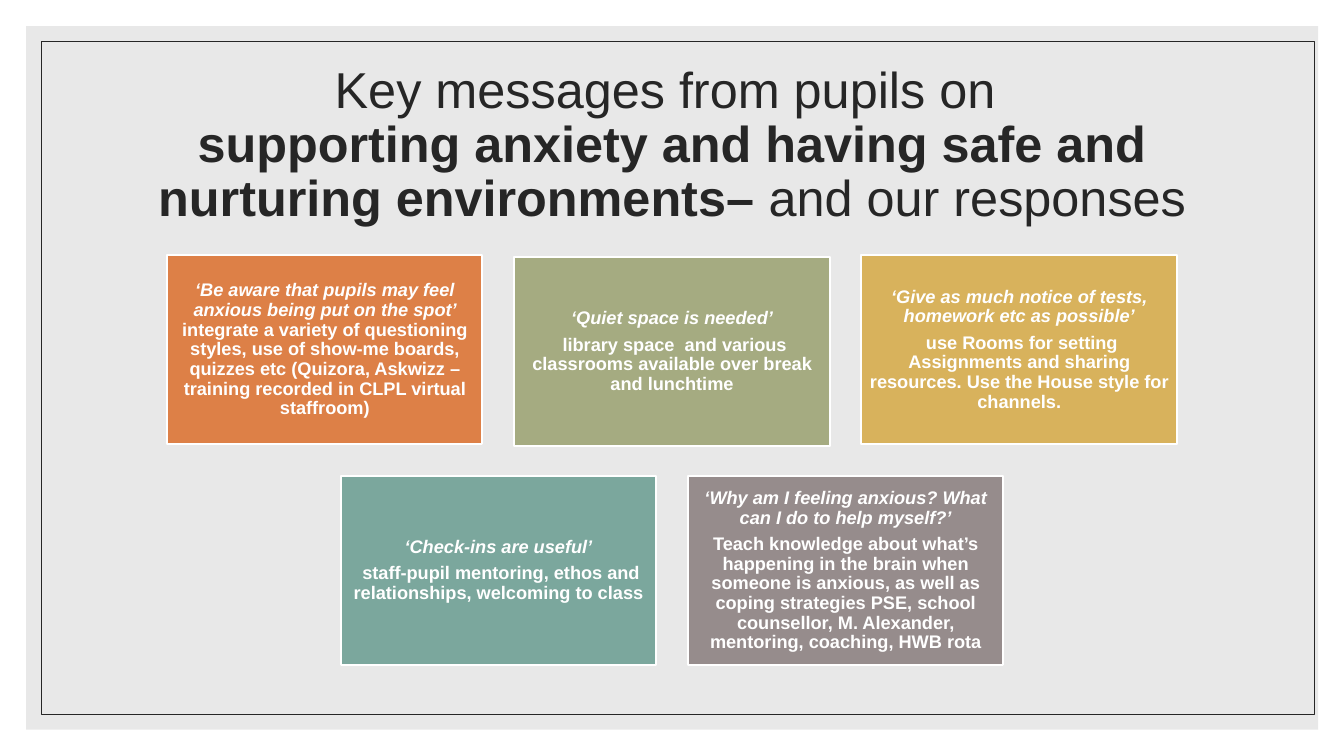
"""Build a slide of pupils' key messages on anxiety and the school's responses."""
from dataclasses import dataclass

from lxml import etree
from pptx import Presentation, util as u
from pptx.dml.color import RGBColor
from pptx.enum import shapes, text
from pptx.oxml.ns import qn


@dataclass(frozen=True)
class Theme:
    font: str = "Arial"
    ink: str = "262626"
    white: str = "FFFFFF"
    panel: str = "D9D9D9"
    orange: str = "DD8047"
    olive: str = "A5AB81"
    gold: str = "D8B25C"
    teal: str = "7BA79D"
    mauve: str = "968C8C"
    head: float = 36
    body: float = 13


theme = Theme()


def write(para, words, size, color, bold=False, italic=False):
    para.alignment = text.PP_ALIGN.CENTER
    para.line_spacing = 0.9
    run = para.add_run()
    run.text = words
    font = run.font
    font.name, font.size = theme.font, u.Pt(size)
    font.bold, font.italic = bold, italic
    font.color.rgb = RGBColor.from_string(color)


def box(left, top, width, height, fill=None, line=None, weight=0.5):
    shape = slide.shapes.add_shape(
        shapes.MSO_SHAPE.RECTANGLE, u.Cm(left), u.Cm(top), u.Cm(width), u.Cm(height))
    shape.shadow.inherit = False
    if fill:
        shape.fill.solid()
        shape.fill.fore_color.rgb = RGBColor.from_string(fill)
    else:
        shape.fill.background()
    if line:
        shape.line.color.rgb = RGBColor.from_string(line)
        shape.line.width = u.Pt(weight)
    else:
        shape.line.fill.background()
    return shape


wide, high = 33.87, 19.05
deck = Presentation()
deck.slide_width, deck.slide_height = u.Cm(wide), u.Cm(high)
slide = deck.slides.add_slide(deck.slide_layouts[5])
slide.background.fill.solid()
slide.background.fill.fore_color.rgb = RGBColor.from_string(theme.white)

panel = box(0.66, 0.66, 32.56, 17.73, fill=theme.panel)
tint = panel.fill._xPr.find(qn("a:solidFill"))[0]
etree.SubElement(tint, qn("a:alpha"), val="60000")
box(1.04, 1.04, 32.08, 16.97, line=theme.ink)

title = slide.shapes.title
slide.shapes._spTree.append(title._element)
title.left, title.top = u.Cm(2.97), u.Cm(1.78)
title.width, title.height = u.Cm(27.94), u.Cm(3.81)
frame = title.text_frame
frame.auto_size = text.MSO_AUTO_SIZE.NONE
frame.vertical_anchor = text.MSO_ANCHOR.MIDDLE
para = frame.paragraphs[0]
write(para, "Key messages from pupils on ", theme.head, theme.ink)
para.add_line_break()
write(para, "supporting anxiety and having safe and nurturing environments– ",
      theme.head, theme.ink, bold=True)
write(para, "and our responses", theme.head, theme.ink)

rows = [
    [
        (theme.orange, 0, False,
         "‘Be aware that pupils may feel anxious being put on the spot’ ",
         "integrate a variety of questioning styles, use of show-me boards, quizzes etc "
         "(Quizora, Askwizz – training recorded in CLPL virtual staffroom)"),
        (theme.olive, 0.05, True,
         "‘Quiet space is needed’",
         " library space  and various classrooms available over break and lunchtime"),
        (theme.gold, 0, True,
         "‘Give as much notice of tests, homework etc as possible’",
         " use Rooms for setting Assignments and sharing resources. "
         "Use the House style for channels."),
    ],
    [
        (theme.teal, 0, True,
         "‘Check-ins are useful’",
         " staff-pupil mentoring, ethos and relationships, welcoming to class"),
        (theme.mauve, 0, True,
         "‘Why am I feeling anxious? What can I do to help myself?’",
         "Teach knowledge about what’s happening in the brain when someone is anxious, "
         "as well as coping strategies PSE, school counsellor, M. Alexander, "
         "mentoring, coaching, HWB rota"),
    ],
]
card_w, card_h, gap = 7.95, 4.77, 0.8
for i, row in enumerate(rows):
    start = (wide - len(row) * (card_w + gap) + gap) / 2
    for j, (color, drop, split, quote, reply) in enumerate(row):
        card = box(start + j * (card_w + gap), 6.43 + i * (card_h + gap) + drop,
                   card_w, card_h, fill=color, line=theme.white, weight=1.5)
        frame = card.text_frame
        frame.word_wrap = True
        frame.vertical_anchor = text.MSO_ANCHOR.MIDDLE
        frame.margin_left = frame.margin_right = u.Cm(0.13)
        frame.margin_top = frame.margin_bottom = u.Cm(0.13)
        para = frame.paragraphs[0]
        write(para, quote, theme.body, theme.white, bold=True, italic=True)
        if split:
            para.space_after = u.Pt(4.6)
            para = frame.add_paragraph()
        write(para, reply, theme.body, theme.white, bold=True)

deck.save("out.pptx")
